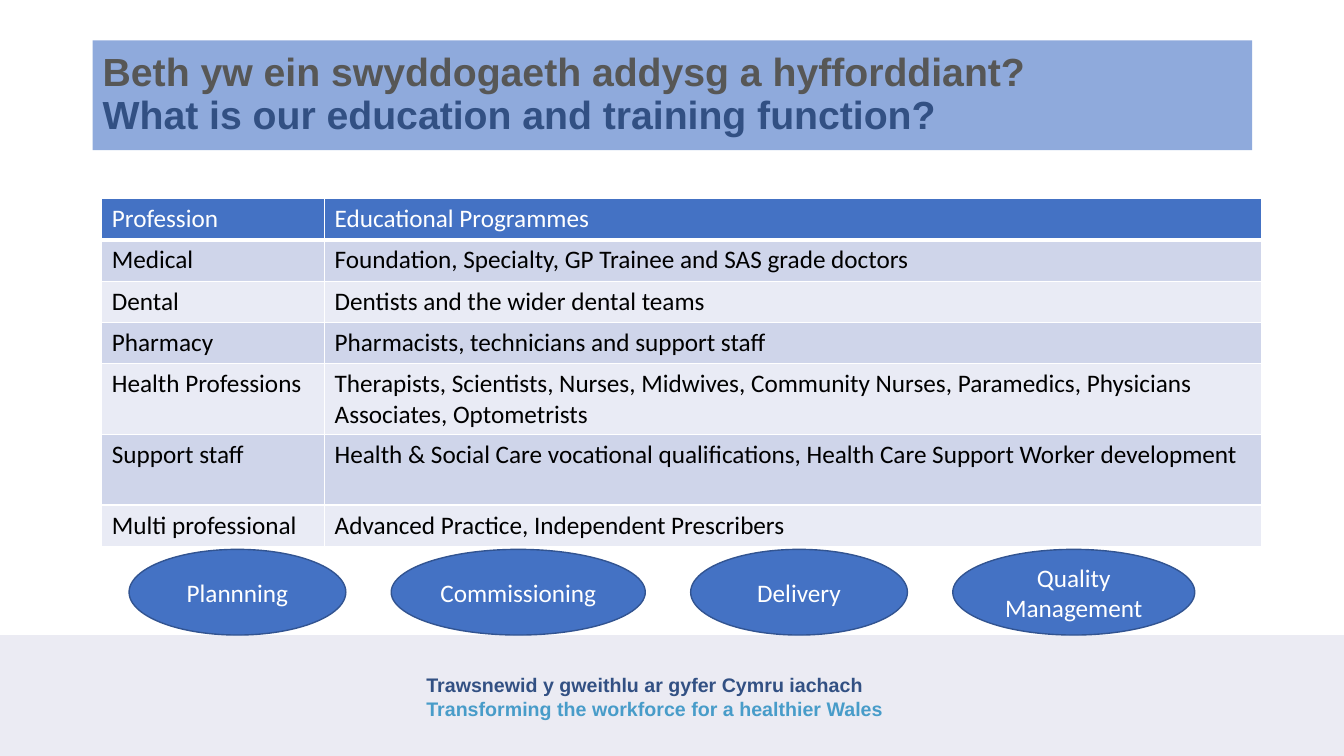
from lxml.etree import SubElement
from pptx import Presentation
from pptx.dml.color import RGBColor
from pptx.enum.shapes import MSO_SHAPE
from pptx.enum.text import MSO_ANCHOR, PP_ALIGN
from pptx.oxml.ns import qn
from pptx.util import Inches, Pt

BLUE, NAVY, WHITE = "4472C4", "325083", "FFFFFF"
BANDS = ["E9EBF5", "CFD5EA"]
BODY = {"name": "Calibri", "size": Pt(18), "bold": False}
TITLE = {"name": "Arial", "size": Pt(28), "bold": True}
FOOTER = {"name": "Arial", "size": Pt(14), "bold": True}

PROGRAMMES = [
    ("Profession", "Educational Programmes"),
    ("Medical", "Foundation, Specialty, GP Trainee and SAS grade doctors"),
    ("Dental", "Dentists and the wider dental teams"),
    ("Pharmacy", "Pharmacists, technicians and support staff"),
    ("Health Professions", "Therapists, Scientists, Nurses, Midwives, Community Nurses, "
     "Paramedics, Physicians Associates, Optometrists"),
    ("Support staff", "Health & Social Care vocational qualifications, "
     "Health Care Support Worker development"),
    ("Multi professional", "Advanced Practice, Independent Prescribers"),
]
ROW_HEIGHTS = [0.41, 0.41, 0.41, 0.41, 0.7, 0.7, 0.41]
FUNCTIONS = [("Plannning", 2.15), ("Commissioning", 2.52),
             ("Delivery", 2.15), ("Quality Management", 2.4)]


def colour(value):
    return RGBColor.from_string(value)


class SlideBuilder:
    def __init__(self, slide):
        self.slide = slide

    def set_text(self, frame, paragraphs, style, **layout):
        frame.word_wrap = True
        for index, lines in enumerate(paragraphs):
            paragraph = frame.add_paragraph() if index else frame.paragraphs[0]
            for key, value in layout.items():
                setattr(paragraph, key, value)
            for number, (text, ink) in enumerate(lines):
                if number:
                    paragraph.add_line_break()
                run = paragraph.add_run()
                run.text = text
                for key, value in style.items():
                    setattr(run.font, key, value)
                run.font.color.rgb = colour(ink)

    def shape(self, kind, box, fill, outline=None):
        shape = self.slide.shapes.add_shape(kind, *map(Inches, box))
        shape.shadow.inherit = False
        shape.fill.solid()
        shape.fill.fore_color.rgb = colour(fill)
        if outline:
            shape.line.color.rgb = colour(outline)
            shape.line.width = Pt(1)
        else:
            shape.line.fill.background()
        shape.text_frame.vertical_anchor = MSO_ANCHOR.MIDDLE
        return shape.text_frame

    def text(self, box, paragraphs, style):
        label = self.slide.shapes.add_textbox(*map(Inches, box))
        self.set_text(label.text_frame, paragraphs, style)

    def borders(self, cell, bottom):
        properties = cell._tc.get_or_add_tcPr()
        for side, width in {"L": 1, "R": 1, "T": 1, "B": bottom}.items():
            edge = SubElement(properties, qn(f"a:ln{side}"), w=str(Pt(width)))
            fill = SubElement(edge, qn("a:solidFill"))
            SubElement(fill, qn("a:srgbClr"), val=WHITE)

    def table(self, box, rows, widths, heights):
        table = self.slide.shapes.add_table(
            len(rows), len(widths), *map(Inches, box)).table
        for column, width in zip(table.columns, widths):
            column.width = Inches(width)
        for index, (values, height) in enumerate(zip(rows, heights)):
            table.rows[index].height = Inches(height)
            for column, value in enumerate(values):
                cell = table.cell(index, column)
                self.borders(cell, 1 if index else 3)
                cell.fill.solid()
                cell.fill.fore_color.rgb = colour(BANDS[index % 2] if index else BLUE)
                ink = "000000" if index else WHITE
                self.set_text(cell.text_frame, [[(value, ink)]], BODY)


def main():
    presentation = Presentation()
    presentation.slide_width = Inches(13.33)
    presentation.slide_height = Inches(7.5)
    builder = SlideBuilder(presentation.slides.add_slide(presentation.slide_layouts[6]))

    builder.shape(MSO_SHAPE.RECTANGLE, (0, 6.3, 13.33, 1.2), "EBEBF3")
    builder.text((4.13, 6.63, 5, 0.57), [
        [("Trawsnewid y gweithlu ar gyfer Cymru iachach", NAVY)],
        [("Transforming the workforce for a healthier Wales", "489CC9")],
    ], FOOTER)

    builder.table((1.01, 1.97, 11.5, sum(ROW_HEIGHTS)), PROGRAMMES, [2.21, 9.29], ROW_HEIGHTS)

    heading = builder.shape(MSO_SHAPE.RECTANGLE, (0.92, 0.4, 11.5, 1.09), "8FAADC")
    builder.set_text(heading, [[
        ("Beth yw ein swyddogaeth addysg a hyfforddiant?", "575756"),
        ("What is our education and training function?", NAVY),
    ]], TITLE, alignment=PP_ALIGN.LEFT, line_spacing=0.9)

    left, gap = 1.28, 0.45
    for name, width in FUNCTIONS:
        oval = builder.shape(MSO_SHAPE.OVAL, (left, 5.45, width, 0.85), BLUE, "325491")
        builder.set_text(oval, [[(name, WHITE)]], BODY, alignment=PP_ALIGN.CENTER)
        left += width + gap

    presentation.save("out.pptx")


if __name__ == "__main__":
    main()
